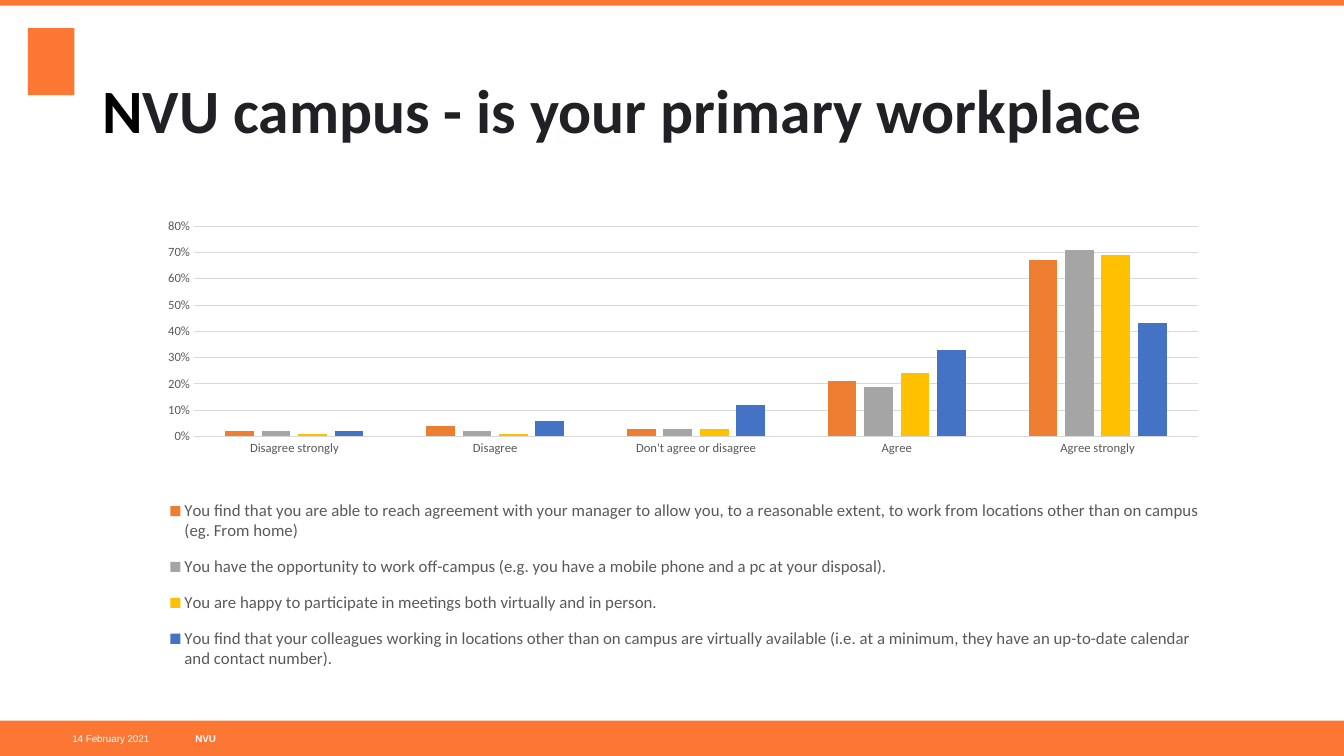
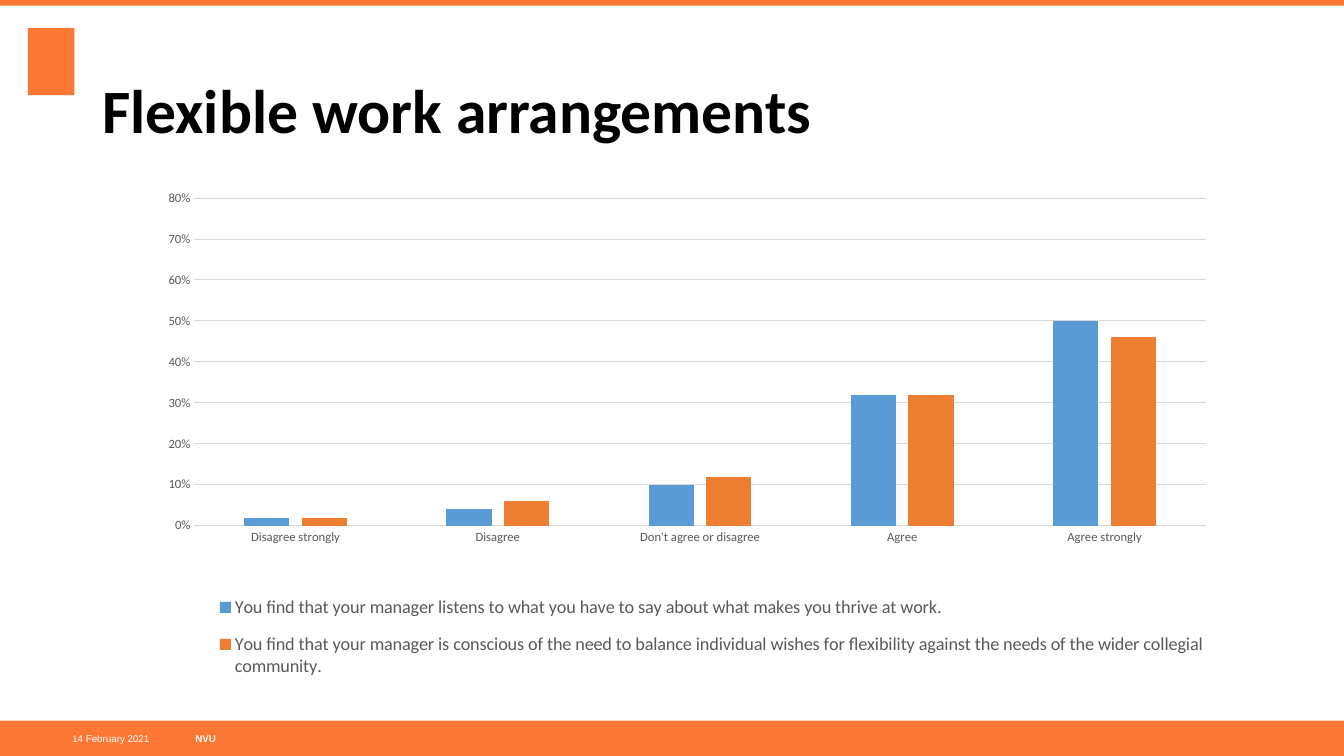
from lxml import etree
from pptx import Presentation
from pptx.chart.data import CategoryChartData
from pptx.dml.color import RGBColor
from pptx.enum.chart import XL_CHART_TYPE, XL_LEGEND_POSITION, XL_TICK_MARK
from pptx.enum.shapes import MSO_SHAPE
from pptx.enum.text import MSO_ANCHOR, PP_ALIGN
from pptx.oxml.ns import qn
from pptx.util import Inches, Pt

RECTANGLE = MSO_SHAPE.RECTANGLE
CLUSTERED = XL_CHART_TYPE.COLUMN_CLUSTERED
LEGEND_BOTTOM = XL_LEGEND_POSITION.BOTTOM
NO_TICK = XL_TICK_MARK.NONE
MIDDLE = MSO_ANCHOR.MIDDLE
LEFT, RIGHT = PP_ALIGN.LEFT, PP_ALIGN.RIGHT

COLUMNS, ROWS = 48, 27
WIDTH, HEIGHT = Inches(13.33), Inches(7.5)
FOOTER_TOP, FOOTER_HEIGHT = 25.74, 1.26

BRAND = "FC7634"
WHITE, BLACK, INK = "FFFFFF", "000000", "202124"
GREY_TEXT, GREY_LINE = "595959", "D9D9D9"
ORANGE, GREY, YELLOW = "ED7D31", "A5A5A5", "FFC000"
BLUE, LIGHT_BLUE = "4472C4", "5B9BD5"
HEADING_FONT, FOOTER_FONT = "Calibri", "Arial"

ANSWERS = ["Disagree strongly", "Disagree", "Don't agree or disagree",
           "Agree", "Agree strongly"]


def color(value):
    return RGBColor.from_string(value)


def place(left, top, width, height):
    return (int(WIDTH * left / COLUMNS), int(HEIGHT * top / ROWS),
            int(WIDTH * width / COLUMNS), int(HEIGHT * height / ROWS))


def add_band(slide, *cells):
    shape = slide.shapes.add_shape(RECTANGLE, *place(*cells))
    shape.shadow.inherit = False
    shape.fill.solid()
    shape.fill.fore_color.rgb = color(BRAND)
    shape.line.fill.background()


def style_font(font, size, fill, name=HEADING_FONT, bold=False):
    font.size, font.name, font.bold = Pt(size), name, bold
    font.color.rgb = color(fill)


def add_text(slide, cells, runs, size, font=HEADING_FONT, bold=False,
             align=LEFT, inset=True, spacing=1.0):
    frame = slide.shapes.add_textbox(*place(*cells)).text_frame
    frame.word_wrap = True
    frame.vertical_anchor = MIDDLE
    if not inset:
        frame.margin_left = frame.margin_right = 0
        frame.margin_top = frame.margin_bottom = 0
    paragraph = frame.paragraphs[0]
    paragraph.alignment = align
    paragraph.line_spacing = spacing
    for text, fill in runs:
        run = paragraph.add_run()
        run.text = text
        style_font(run.font, size, fill, font, bold)


def manual_layout(shares, inner=False):
    layout = etree.Element(qn("c:layout"))
    manual = etree.SubElement(layout, qn("c:manualLayout"))
    settings = [("layoutTarget", "inner")] if inner else []
    settings += [("xMode", "edge"), ("yMode", "edge")]
    settings += zip("xywh", shares)
    for tag, value in settings:
        etree.SubElement(manual, qn(f"c:{tag}")).set("val", str(value))
    return layout


def style_axes(chart):
    category_axis, value_axis = chart.category_axis, chart.value_axis
    for axis in (category_axis, value_axis):
        axis.major_tick_mark = axis.minor_tick_mark = NO_TICK
        style_font(axis.tick_labels.font, 9, GREY_TEXT)
    value_axis.minimum_scale, value_axis.maximum_scale = 0, 0.8
    value_axis.major_unit = 0.1
    value_axis.has_major_gridlines = True
    value_axis.tick_labels.number_format = "0%"
    value_axis.tick_labels.number_format_is_linked = False
    value_axis.format.line.fill.background()
    for line in (category_axis.format.line, value_axis.major_gridlines.format.line):
        line.color.rgb = color(GREY_LINE)
        line.width = Pt(0.75)


def style_legend(chart, size, shares):
    chart.has_legend = True
    chart.legend.position = LEGEND_BOTTOM
    chart.legend.include_in_layout = False
    style_font(chart.legend.font, size, GREY_TEXT)
    chart.element.find(".//" + qn("c:legendPos")).addnext(manual_layout(shares))


def add_survey_chart(slide, cells, statements, plot, legend, legend_size):
    data = CategoryChartData(number_format="0%")
    data.categories = ANSWERS
    for statement, _, values in statements:
        data.add_series(statement, values)
    chart = slide.shapes.add_chart(CLUSTERED, *place(*cells), data).chart
    chart.has_title = False
    style_font(chart.font, 10, BLACK)
    bars = chart.plots[0]
    bars.gap_width, bars.overlap = 219, -27
    bars.vary_by_categories = False
    for series, (_, fill, _) in zip(bars.series, statements):
        series.format.fill.solid()
        series.format.fill.fore_color.rgb = color(fill)
    style_axes(chart)
    style_legend(chart, legend_size, legend)
    plot_area = chart.element.find(".//" + qn("c:plotArea"))
    for layout in plot_area.findall(qn("c:layout")):
        plot_area.remove(layout)
    plot_area.insert(0, manual_layout(plot, inner=True))


def add_survey_slide(presentation, title):
    slide = presentation.slides.add_slide(presentation.slide_layouts[6])
    add_band(slide, 1, 1, 1.66, 2.4)
    add_band(slide, 0, FOOTER_TOP, COLUMNS, FOOTER_HEIGHT)
    add_band(slide, 0, 0, COLUMNS, 0.2)
    add_text(slide, (6.98, FOOTER_TOP, 13.4, FOOTER_HEIGHT), [("NVU", WHITE)],
             7, font=FOOTER_FONT, bold=True, inset=False)
    add_text(slide, (0.97, FOOTER_TOP, 4.36, FOOTER_HEIGHT),
             [("14 February 2021", WHITE)], 7, font=FOOTER_FONT,
             align=RIGHT, inset=False)
    add_text(slide, (3.3, 1.44, 41.4, 5.22), title, 44, bold=True, spacing=0.9)
    return slide


def main():
    presentation = Presentation()
    presentation.slide_width, presentation.slide_height = WIDTH, HEIGHT

    slide = add_survey_slide(presentation, [
        ("N", BLACK), ("VU campus - is your primary workplace", INK)])
    add_survey_chart(slide, (5, 5.58, 38.56, 19.26), [
        ("You find that you are able to reach agreement with your manager to "
         "allow you, to a reasonable extent, to work from locations other than "
         "on campus (eg. From home)", ORANGE, (0.02, 0.04, 0.03, 0.21, 0.67)),
        ("You have the opportunity to work off-campus (e.g. you have a mobile "
         "phone and a pc at your disposal).",
         GREY, (0.02, 0.02, 0.03, 0.19, 0.71)),
        ("You are happy to participate in meetings both virtually and in person.",
         YELLOW, (0.01, 0.01, 0.03, 0.24, 0.69)),
        ("You find that your colleagues working in locations other than on "
         "campus are virtually available (i.e. at a minimum, they have an "
         "up-to-date calendar and contact number).",
         BLUE, (0.02, 0.06, 0.12, 0.33, 0.43)),
    ], plot=(0.05, 0.13, 0.93, 0.39), legend=(0.02, 0.61, 0.97, 0.37),
        legend_size=12)

    slide = add_survey_slide(presentation, [("Flexible work arrangements", BLACK)])
    add_survey_chart(slide, (5, 5.29, 38.84, 19.84), [
        ("You find that your manager listens to what you have to say about what "
         "makes you thrive at work.",
         LIGHT_BLUE, (0.02, 0.04, 0.1, 0.32, 0.5)),
        ("You find that your manager is conscious of the need to balance "
         "individual wishes for flexibility against the needs of the wider "
         "collegial community.", ORANGE, (0.02, 0.06, 0.12, 0.32, 0.46)),
    ], plot=(0.05, 0.09, 0.93, 0.59), legend=(0.06, 0.78, 0.93, 0.2),
        legend_size=13)

    presentation.save("out.pptx")


if __name__ == "__main__":
    main()
